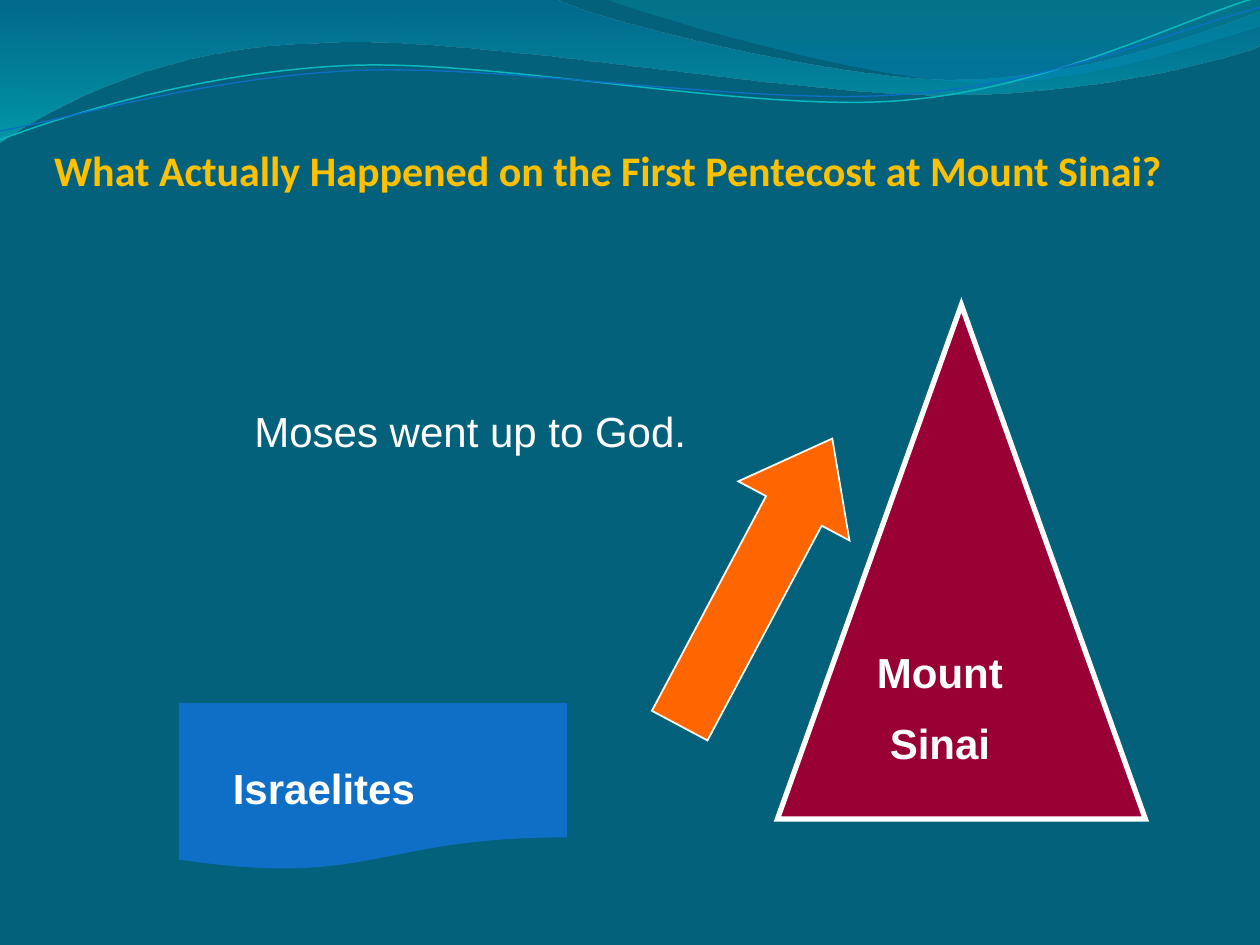
"""Build the Mount Sinai slide with its wave header."""
import math
import lxml.etree
import pptx
import pptx.dml.color
import pptx.enum.shapes
import pptx.enum.text
import pptx.oxml.ns
import pptx.util

Inches, Pt = pptx.util.Inches, pptx.util.Pt
KIND = pptx.enum.shapes.MSO_SHAPE
ALIGN = pptx.enum.text.PP_ALIGN
THEME = {
    "back": "04617B", "white": "FFFFFF", "gold": "FFC000", "blue": "0F6FC6",
    "red": "990033", "orange": "FF6600", "teal": "0AB8BF",
    "size": 24, "head": "Calibri", "body": "Arial",
}
TITLE = "What Actually Happened on the First Pentecost at Mount Sinai?"
SHAPES = [
    (KIND.ISOSCELES_TRIANGLE, (6.17, 2.42, 2.92, 4.08), "red", 3, 0, ()),
    (KIND.FLOWCHART_DOCUMENT, (1.42, 5.58, 3.08, 1.33), "blue", 0, 0, ()),
    (KIND.UP_ARROW, (5.5, 3.33, 1, 2.58), "orange", 1, 28, (0.5, 0.65)),
]
LABELS = [
    (["Israelites"], (1.75, 6, 2.5, 0.5), True, ALIGN.LEFT),
    (["Mount", "Sinai"], (6.67, 5.08, 1.58, 1.1), True, ALIGN.CENTER),
    (["Moses went up to God."], (1.92, 3.17, 5.92, 0.9), False, ALIGN.LEFT),
]
BANDS = [
    ([(0, 0), (4.4, -0.01),
      (4.76, 0.17, 6.64, 0.63, 7.58, 0.63), (8.53, 0.63, 9.58, 0.26, 10, 0.09),
      (10.01, 0.36),
      (9.83, 0.44, 8.7, 0.76, 7.46, 0.75), (6.22, 0.75, 3.82, 0.28, 2.57, 0.34),
      (1.29, 0.36, 0.46, 0.83, -0.01, 1.13)],
     [(0, "0074A1", 45), (1, "00C6CF", 55)]),
    ([(4.79, -0.01),
      (5.09, 0.11, 6.82, 0.62, 7.69, 0.65), (8.56, 0.69, 9.61, 0.32, 10, 0.21),
      (10, 0)],
     [(0, "00A1A9", 30), (0.8, "008BBF", 45)]),
]
WAVES = [
    ([(0, 1.11), (0.48, 0.93, 1.58, 0.57, 2.77, 0.52),
      (3.95, 0.47, 5.93, 0.89, 7.13, 0.8), (8.33, 0.71, 9.38, 0.15, 9.98, -0.02)],
     "teal", 0.85),
    ([(0, 1.04), (0.47, 0.96, 1.64, 0.61, 2.83, 0.56),
      (4.03, 0.51, 5.97, 0.84, 7.17, 0.75), (8.36, 0.67, 9.41, 0.21, 10, 0.06)],
     "blue", 0.75),
]
TILT = -2.7


def tint(name):
    return pptx.dml.color.RGBColor.from_string(THEME.get(name, name))


def level(dots):
    mid = [(min(axis) + max(axis)) / 2 for axis in zip(*dots)]
    cos, sin = math.cos(math.radians(-TILT)), math.sin(math.radians(-TILT))
    return [(mid[0] + (x - mid[0]) * cos - (y - mid[1]) * sin,
             mid[1] + (x - mid[0]) * sin + (y - mid[1]) * cos)
            for x, y in dots]


def bend(shape, parts):
    tag = pptx.oxml.ns.qn
    lines = iter(list(shape.element.iter(tag("a:lnTo"))))
    for part in parts:
        first = next(lines)
        if len(part) == 6:
            first.tag = tag("a:cubicBezTo")
            for line in (next(lines), next(lines)):
                first.append(line[0])
                line.getparent().remove(line)


def draw(slide, parts, close):
    dots = [part[i:i + 2] for part in parts for i in range(0, len(part), 2)]
    if not close:
        dots = level(dots)
    dots = [(Inches(x), Inches(y)) for x, y in dots]
    pen = slide.shapes.build_freeform(*dots[0])
    pen.add_line_segments(dots[1:], close=close)
    shape = pen.convert_to_shape()
    shape.shadow.inherit = False
    bend(shape, parts[1:])
    return shape


def shade(shape, stops):
    shape.line.fill.background()
    shape.fill.gradient()
    shape.fill.gradient_angle = 270
    tag = pptx.oxml.ns.qn
    nodes = list(shape.element.iter(tag("a:gs")))
    for stop, node, (place, hue, alpha) in zip(
            shape.fill.gradient_stops, nodes, stops):
        stop.position = place
        stop.color.rgb = tint(hue)
        lxml.etree.SubElement(node[0], tag("a:alpha"), val=str(alpha * 1000))


def stroke(shape, hue, width):
    shape.line.color.rgb = tint(hue)
    shape.line.width = Pt(width)
    edge = shape.line.fill._xPr
    lxml.etree.SubElement(edge, pptx.oxml.ns.qn("a:miter"), lim="800000")


def style(para, font, hue, bold):
    for run in para.runs:
        run.font.name = THEME[font]
        run.font.size = Pt(THEME["size"])
        run.font.bold = bold
        run.font.color.rgb = tint(hue)


def add_title(slide):
    title = slide.shapes.title
    title.left, title.top, title.width, title.height = map(
        Inches, (0.43, 0.61, 9.37, 0.94))
    frame = title.text_frame
    frame.text = TITLE
    frame.word_wrap = True
    frame.vertical_anchor = pptx.enum.text.MSO_ANCHOR.BOTTOM
    frame.margin_left = frame.margin_right = frame.margin_bottom = 0
    frame.paragraphs[0].alignment = ALIGN.LEFT
    style(frame.paragraphs[0], "head", "gold", True)


def add_shape(slide, kind, box, hue, width, turn, bends):
    shape = slide.shapes.add_shape(kind, *map(Inches, box))
    shape.shadow.inherit = False
    shape.rotation = turn
    for index, value in enumerate(bends):
        shape.adjustments[index] = value
    shape.fill.solid()
    shape.fill.fore_color.rgb = tint(hue)
    if width:
        stroke(shape, "white", width)
    else:
        shape.line.fill.background()


def add_label(slide, lines, box, bold, align):
    frame = slide.shapes.add_textbox(*map(Inches, box)).text_frame
    frame.word_wrap = True
    frame.text = "\n".join(lines)
    for para in frame.paragraphs:
        para.alignment = align
        para.space_before = Pt(12)
        style(para, "body", "white", bold)


def main():
    deck = pptx.Presentation()
    deck.slide_width, deck.slide_height = Inches(10), Inches(7.5)
    slide = deck.slides.add_slide(deck.slide_layouts[5])
    slide.background.fill.solid()
    slide.background.fill.fore_color.rgb = tint("back")
    for parts, stops in BANDS:
        shade(draw(slide, parts, True), stops)
    for parts, hue, width in WAVES:
        wave = draw(slide, parts, False)
        wave.rotation = TILT
        wave.fill.background()
        stroke(wave, hue, width)
    for item in SHAPES:
        add_shape(slide, *item)
    for item in LABELS:
        add_label(slide, *item)
    add_title(slide)
    deck.save("out.pptx")


if __name__ == "__main__":
    main()
